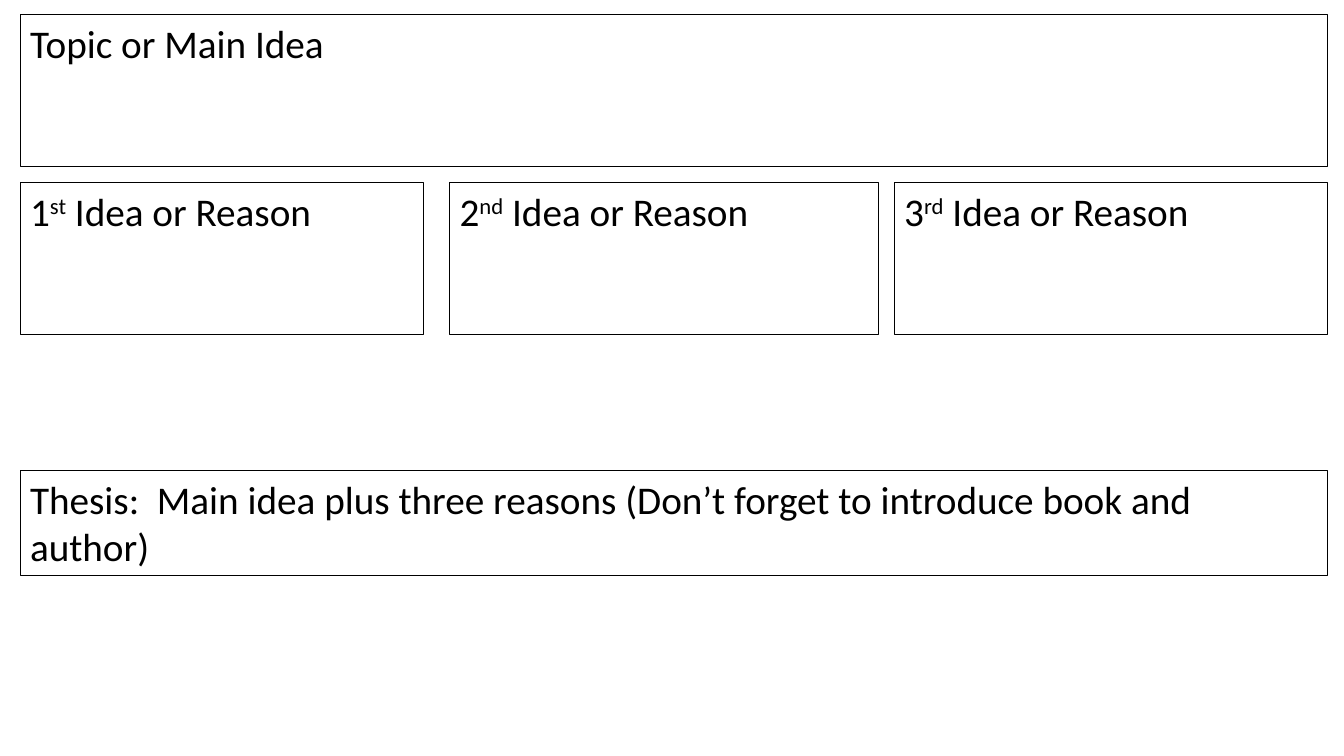
from pptx import Presentation
from pptx.dml.color import RGBColor
from pptx.enum.text import MSO_AUTO_SIZE as AutoSize
from pptx.util import Emu, Pt

EMU_PER_PX = 9144  # 100 px to the inch
INK = "000000"
LEFT, RIGHT = 20, 1317
BOX_HEIGHT = 151


def px(length):
    return Emu(length * EMU_PER_PX)


def color(hex_code):
    return RGBColor.from_string(hex_code)


def add_run(paragraph, text, superscript=False):
    run = paragraph.add_run()
    run.text = text
    run.font.name = "Calibri"
    run.font.size = Pt(28)
    run.font.color.rgb = color(INK)
    if superscript:
        run._r.get_or_add_rPr().set("baseline", "30000")


def add_box(slide, left, top, width, height):
    """Add an outlined writing box and return its first paragraph."""
    box = slide.shapes.add_textbox(px(left), px(top), px(width), px(height))
    box.line.color.rgb = color(INK)
    box.line.width = Pt(0.75)
    box.text_frame.word_wrap = True
    box.text_frame.auto_size = AutoSize.NONE
    return box.text_frame.paragraphs[0]


def add_reason(slide, left, width, number, suffix):
    heading = add_box(slide, left, 181, width, BOX_HEIGHT)
    add_run(heading, number)
    add_run(heading, suffix, superscript=True)
    add_run(heading, " Idea or Reason")


def main():
    organizer = Presentation()
    organizer.slide_width, organizer.slide_height = px(1333), px(750)
    slide = organizer.slides.add_slide(organizer.slide_layouts[6])

    # Topic
    topic = add_box(slide, LEFT, 14, RIGHT - LEFT, BOX_HEIGHT)
    add_run(topic, "Topic or Main Idea")

    # Three reasons
    for left, width, number, suffix in (
        (LEFT, 400, "1", "st"),
        (446, 425, "2", "nd"),
        (887, 430, "3", "rd"),
    ):
        add_reason(slide, left, width, number, suffix)

    # Thesis
    thesis = add_box(slide, LEFT, 467, RIGHT - LEFT, 104)
    add_run(thesis, "Thesis:  Main idea plus three reasons "
                    "(Don’t forget to introduce book and author)")

    organizer.save("out.pptx")


if __name__ == "__main__":
    main()
